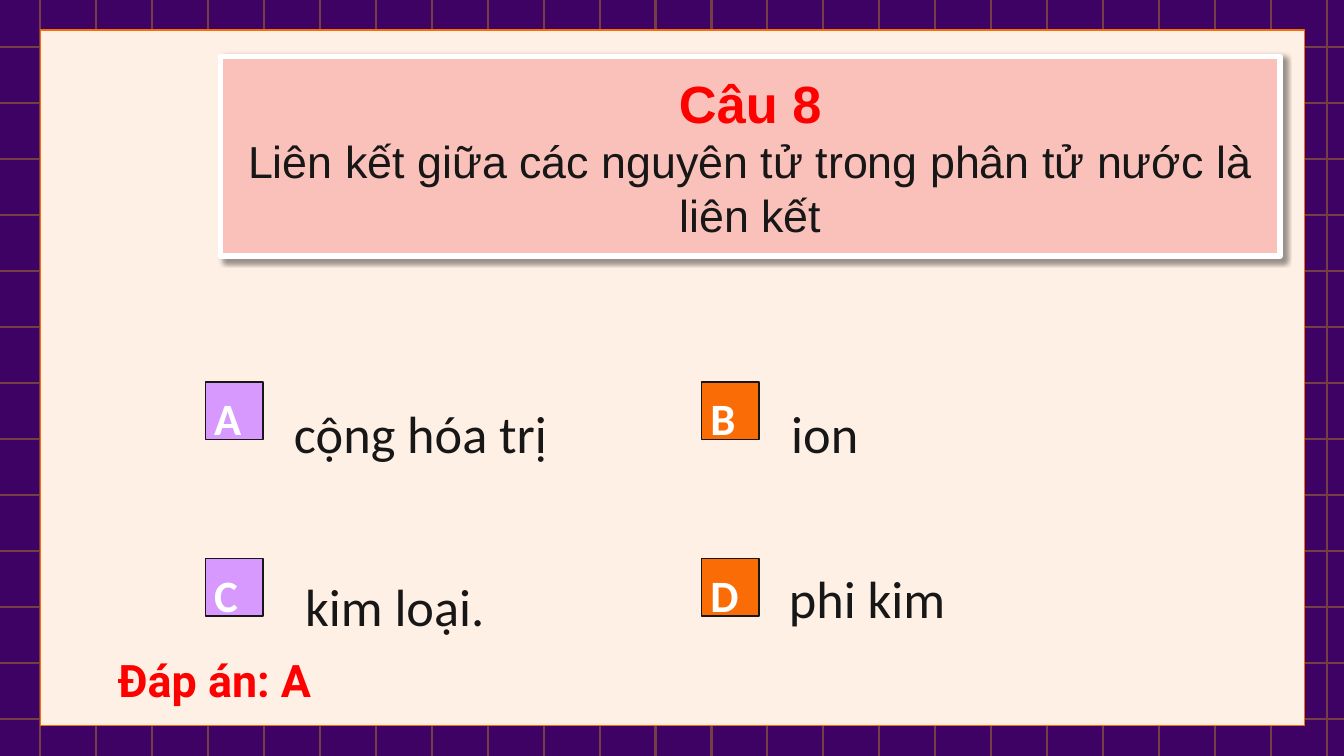
from dataclasses import dataclass
from itertools import count, takewhile

from lxml import etree
from pptx import Presentation
from pptx import util as u
from pptx.dml.color import RGBColor
from pptx.enum import shapes, text
from pptx.oxml import ns


@dataclass(frozen=True)
class Theme:
    night: str = "3D0263"
    grid: str = "753E46"
    cream: str = "FFF0E5"
    orange: str = "FA6D06"
    lilac: str = "D799FD"
    pink: str = "F9C1B9"
    ink: str = "181717"
    white: str = "FFFFFF"
    red: str = "FF0000"
    large: float = 37.4
    medium: float = 32


@dataclass(frozen=True)
class Box:
    left: float
    top: float
    width: float
    height: float

    def cm(self) -> list:
        return [u.Cm(v) for v in (self.left, self.top, self.width, self.height)]


@dataclass(frozen=True)
class Style:
    face: str
    size: float
    color: str
    bold: bool = False


@dataclass(frozen=True)
class Choice:
    letter: str
    words: str
    tile: Box
    fill: str
    body: Box


T = Theme()
WIDE, HIGH = 33.87, 19.05
PITCH, GRID_X, GRID_Y = 1.41, 1.01, 1.19
COLS, ROWS, SIDE = (5.18, 17.68), (9.63, 14.07), 1.45

BODY = Style("Calibri", T.large, T.ink)
LETTER = Style("Calibri", T.medium, T.white, True)
ANSWER = Style("Roboto", T.medium, T.red, True)
HEAD = Style("Arial", T.large, T.red, True)
QUERY = Style("Arial", T.medium, T.ink)

WORDS = [
    ("A", "cộng hóa trị", Box(7.16, 8.41, 9.02, 3.45)),
    ("B", "ion", Box(19.69, 8.41, 13, 3.45)),
    ("C", "kim loại.", Box(7.44, 12.75, 10.2, 3.45)),
    ("D", "phi kim", Box(19.63, 12.57, 9.02, 3.45)),
]
CHOICES = [
    Choice(key, words, Box(COLS[i % 2], ROWS[i // 2], SIDE, SIDE),
           (T.lilac, T.orange)[i % 2], body)
    for i, (key, words, body) in enumerate(WORDS)
]


def rgb(color: str) -> RGBColor:
    return RGBColor.from_string(color)


def write(para, words: str, style: Style) -> None:
    para.text = words
    font = para.font
    font.name, font.size, font.bold = style.face, u.Pt(style.size), style.bold
    font.color.rgb = rgb(style.color)


def paint(shape, fill: str, line: str = "", width: float = 1) -> None:
    shape.fill.solid()
    shape.fill.fore_color.rgb = rgb(fill)
    if line:
        shape.line.color.rgb = rgb(line)
        shape.line.width = u.Pt(width)
    else:
        shape.line.fill.background()


def rect(slide, box: Box, fill: str, line: str = "") -> None:
    shape = slide.shapes.add_shape(shapes.MSO_SHAPE.RECTANGLE, *box.cm())
    shape.shadow.inherit = False
    paint(shape, fill, line)


def label(slide, box: Box, words: str, style: Style, wrap: bool = True):
    frame = slide.shapes.add_textbox(*box.cm()).text_frame
    frame.word_wrap = wrap
    write(frame.paragraphs[0], words, style)
    return frame


def rule(slide, x1: float, y1: float, x2: float, y2: float) -> None:
    ends = [u.Cm(v) for v in (x1, y1, x2, y2)]
    line = slide.shapes.add_connector(shapes.MSO_CONNECTOR.STRAIGHT, *ends)
    line.line.color.rgb = rgb(T.grid)
    line.line.width = u.Pt(1.5)
    etree.SubElement(line._element.spPr, ns.qn("a:effectLst"))


def steps(start: float, limit: float) -> list[float]:
    return list(takewhile(lambda v: v < limit, count(start, PITCH)))


def shade(shape) -> None:
    effects = etree.SubElement(shape._element.spPr, ns.qn("a:effectLst"))
    outer = etree.SubElement(
        effects, ns.qn("a:outerShdw"), blurRad=str(u.Pt(4)), dist=str(u.Pt(3)),
        dir=str(45 * 60000), algn="tl", rotWithShape="0")
    color = etree.SubElement(outer, ns.qn("a:srgbClr"), val="000000")
    etree.SubElement(color, ns.qn("a:alpha"), val="40000")


def draw_back(slide) -> None:
    rect(slide, Box(0, 0, WIDE, HIGH), T.night)
    for x in steps(GRID_X, WIDE):
        rule(slide, x, HIGH, x, 0)
    for y in steps(GRID_Y, HIGH):
        rule(slide, 0, y, WIDE, y)
    rect(slide, Box(1.02, 0.76, 31.85, 17.53), T.cream, T.orange)


def draw_choice(slide, item: Choice) -> None:
    frame = label(slide, item.body, item.words, BODY)
    frame.paragraphs[0].line_spacing = 2.0
    rect(slide, item.tile, item.fill, T.ink)
    spot = Box(item.tile.left - 0.03, item.tile.top + 0.1, 1.2, 1.63)
    label(slide, spot, item.letter, LETTER, wrap=False)


def draw_title(slide) -> None:
    title = slide.shapes.title
    title.left, title.top, title.width, title.height = Box(5.56, 1.42, 26.7, 5.03).cm()
    paint(title, T.pink, T.white, 4)
    shade(title)
    frame = title.text_frame
    frame.auto_size = text.MSO_AUTO_SIZE.NONE
    frame.vertical_anchor = text.MSO_ANCHOR.MIDDLE
    write(frame.paragraphs[0], "Câu 8", HEAD)
    write(frame.add_paragraph(),
          "Liên kết giữa các nguyên tử trong phân tử nước là liên kết", QUERY)
    for para in frame.paragraphs:
        para.alignment = text.PP_ALIGN.CENTER
    # Bring the title in front of the panel
    slide.shapes._spTree.append(title._element)


def main() -> None:
    deck = Presentation()
    deck.slide_width, deck.slide_height = u.Cm(WIDE), u.Cm(HIGH)
    slide = deck.slides.add_slide(deck.slide_layouts.get_by_name("Title Only"))

    # Grid and panel
    draw_back(slide)

    # Four choices
    for item in CHOICES:
        draw_choice(slide, item)

    # Right answer
    frame = label(slide, Box(1.78, 16.46, 7.26, 1.37), "Đáp án: A", ANSWER)
    frame.margin_left = frame.margin_top = frame.margin_right = frame.margin_bottom = 0
    frame.paragraphs[0].alignment = text.PP_ALIGN.CENTER

    # Question
    draw_title(slide)
    deck.save("out.pptx")


if __name__ == "__main__":
    main()
